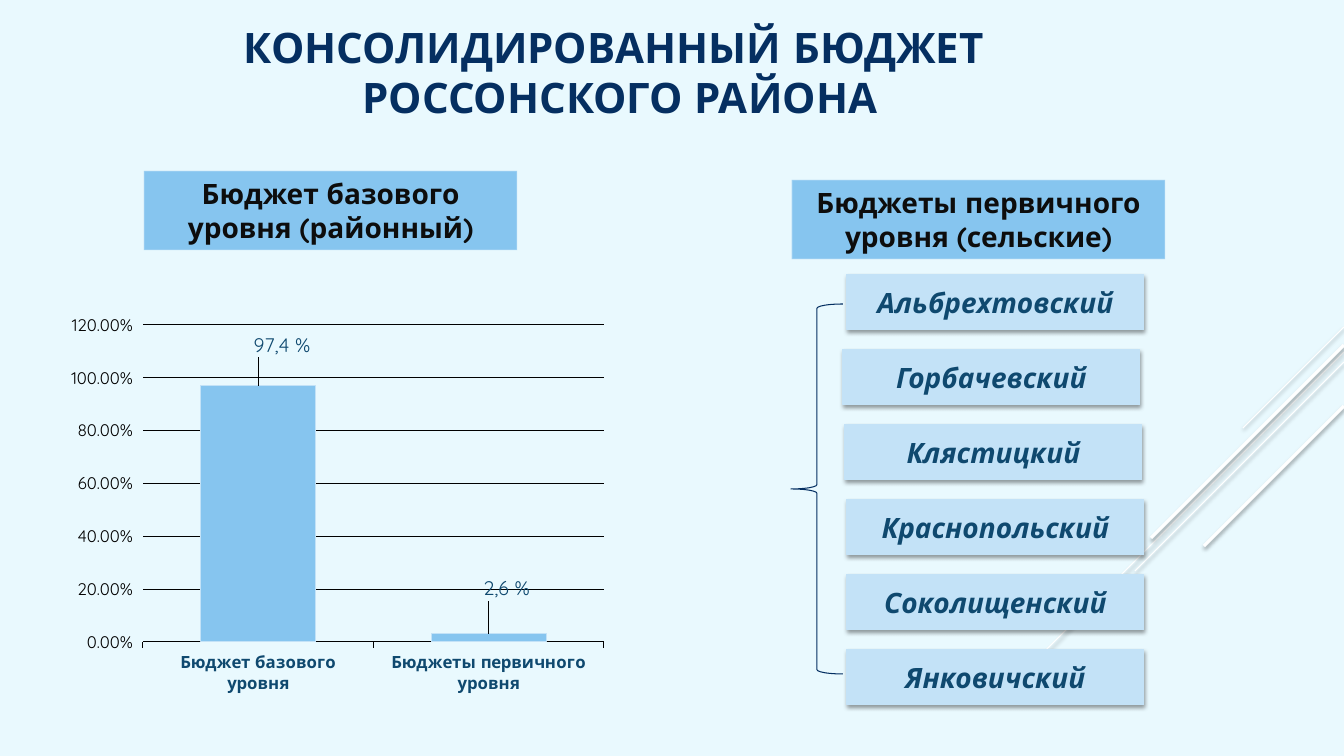
from lxml import etree
from pptx import Presentation
from pptx.chart.data import CategoryChartData
from pptx.dml.color import RGBColor
from pptx.enum.chart import XL_CHART_TYPE, XL_LABEL_POSITION, XL_TICK_MARK
from pptx.enum.shapes import MSO_CONNECTOR, MSO_SHAPE
from pptx.enum.text import MSO_ANCHOR, PP_ALIGN
from pptx.oxml import parse_xml
from pptx.oxml.ns import nsdecls, qn
from pptx.util import Pt

COLUMNS = XL_CHART_TYPE.COLUMN_CLUSTERED
LABEL_ABOVE = XL_LABEL_POSITION.OUTSIDE_END
TICK_OUT, TICK_NONE = XL_TICK_MARK.OUTSIDE, XL_TICK_MARK.NONE
STRAIGHT = MSO_CONNECTOR.STRAIGHT
RECTANGLE, LEFT_BRACE = MSO_SHAPE.RECTANGLE, MSO_SHAPE.LEFT_BRACE
MIDDLE, CENTER = MSO_ANCHOR.MIDDLE, PP_ALIGN.CENTER

FONT = "Quicksand"
BACKGROUND = RGBColor(0xE9, 0xF9, 0xFE)
WHITE = RGBColor(0xFF, 0xFF, 0xFF)
BLACK = RGBColor(0, 0, 0)
NEAR_BLACK = RGBColor(0x0D, 0x0D, 0x0D)
NAVY = RGBColor(0x05, 0x2F, 0x61)
BRACE_NAVY = RGBColor(0x03, 0x2E, 0x61)
TEAL = RGBColor(0x0F, 0x49, 0x6F)
BLUE = RGBColor(0x86, 0xC5, 0xEF)
PALE_BLUE = RGBColor(0xC3, 0xE2, 0xF7)

TITLE = "КОНСОЛИДИРОВАННЫЙ БЮДЖЕТ \vРОССОНСКОГО РАЙОНА"
HEADINGS = [  # text, left, top
    ("Бюджет базового уровня (районный)", 144, 171),
    ("Бюджеты первичного уровня (сельские)", 792, 180),
]
VILLAGES = [  # name, left
    ("Альбрехтовский", 847),
    ("Горбачевский", 843),
    ("Клястицкий", 845),
    ("Краснопольский", 847),
    ("Соколищенский", 847),
    ("Янковичский", 847),
]
SHARES = [  # category, share, label, label shift
    ("Бюджет базового уровня", 0.97, "97,4 %", (24, -24)),
    ("Бюджеты первичного уровня", 0.03, "2,6 %", (18, -29)),
]
STRIPES = [  # y at the right edge, run to the lower left, width in points
    (327, 101, 0.75),
    (352, 329, 0.75),
    (362, 209, 0.75),
    (345, 193, 2.25),
    (406, 140, 2.25),
]
SLIDE_W, SLIDE_H = 1344, 756
CHART_LEFT, CHART_TOP, CHART_W, CHART_H = 59, 304, 586, 452
PLOT = {"x": 84, "y": 21, "w": 461, "h": 317}
HEADING_W, HEADING_H = 373, 79
VILLAGE_TOP, VILLAGE_STEP, VILLAGE_W, VILLAGE_H = 275, 75, 297, 55


def px(*lengths):
    return [round(length * 914400 / 100.8) for length in lengths]


def style_font(font, size, color, bold=False, italic=False):
    font.name, font.size, font.bold, font.italic = FONT, Pt(size), bold, italic
    font.color.rgb = color


def write(frame, text, **font_format):
    frame.word_wrap = True
    frame.vertical_anchor = MIDDLE
    paragraph = frame.paragraphs[0]
    paragraph.text = text
    paragraph.alignment = CENTER
    for run in paragraph.runs:
        style_font(run.font, **font_format)


def cast_shadow(shape):
    properties = shape._element.spPr
    for old in properties.findall(qn("a:effectLst")):
        properties.remove(old)
    properties.append(parse_xml(
        f'<a:effectLst {nsdecls("a")}><a:outerShdw blurRad="39370" dist="20320" '
        'dir="5400000" rotWithShape="0"><a:srgbClr val="000000">'
        '<a:alpha val="38000"/></a:srgbClr></a:outerShdw></a:effectLst>'))


def add_box(slide, text, at, fill, **font_format):
    box = slide.shapes.add_shape(RECTANGLE, *px(*at))
    box.shadow.inherit = False
    box.fill.solid()
    box.fill.fore_color.rgb = fill
    box.line.color.rgb = PALE_BLUE
    box.line.width = Pt(0.75)
    write(box.text_frame, text, **font_format)
    return box


def add_stripes(slide):
    for top, run, width in STRIPES:
        stripe = slide.shapes.add_connector(
            STRAIGHT, *px(SLIDE_W, top, SLIDE_W - run, top + run))
        stripe.line.color.rgb = WHITE
        stripe.line.width = Pt(width)
        cast_shadow(stripe)


def manual_layout(places, target=""):
    """Layout element that holds px lengths as parts of the chart."""
    modes = "".join(f'<c:{side}Mode val="edge"/>' for side in "xy") if target else ""
    values = "".join(
        f'<c:{key} val="{length / (CHART_W if key in "xw" else CHART_H):.4f}"/>'
        for key, length in places.items())
    return parse_xml(f'<c:layout {nsdecls("c")}><c:manualLayout>{target}{modes}'
                     f'{values}</c:manualLayout></c:layout>')


def hide_leader_lines(labels):
    labels._element.append(parse_xml(
        f'<c:extLst {nsdecls("c")}><c:ext uri="{{CE6537A1-D6FC-4f65-9D91-7224C49458BB}}" '
        'xmlns:c15="http://schemas.microsoft.com/office/drawing/2012/chart">'
        '<c15:showLeaderLines val="0"/></c:ext></c:extLst>'))


def add_share_chart(slide):
    data = CategoryChartData(number_format="0.00%")
    data.categories = [category for category, *_ in SHARES]
    data.add_series("Series 1", [share for _, share, *_ in SHARES])
    at = px(CHART_LEFT, CHART_TOP, CHART_W, CHART_H)
    chart = slide.shapes.add_chart(COLUMNS, *at, data).chart
    chart.has_legend = chart.has_title = False
    style_font(chart.font, 12, BLACK)

    plot_area = chart._chartSpace.chart.plotArea
    for old in plot_area.findall(qn("c:layout")):
        plot_area.remove(old)
    plot_area.insert(0, manual_layout(PLOT, '<c:layoutTarget val="inner"/>'))

    categories, values = chart.category_axis, chart.value_axis
    style_font(categories.tick_labels.font, 12, TEAL, bold=True)
    categories.major_tick_mark = values.major_tick_mark = TICK_OUT
    categories.minor_tick_mark = values.minor_tick_mark = TICK_NONE
    style_font(values.tick_labels.font, 12, BLACK)
    values.tick_labels.number_format = "0.00%"
    values.tick_labels.number_format_is_linked = False
    values.minimum_scale, values.maximum_scale, values.major_unit = 0, 1.2, 0.2
    values.format.line.fill.background()
    for line in (categories.format.line, values.major_gridlines.format.line):
        line.color.rgb = BLACK
        line.width = Pt(0.75)

    plot = chart.plots[0]
    plot.gap_width = 100
    plot.vary_by_categories = False
    series = plot.series[0]
    series.format.fill.solid()
    series.format.fill.fore_color.rgb = BLUE
    series.format.line.color.rgb = PALE_BLUE
    series.format.line.width = Pt(0.75)
    for index, (_, _, caption, (dx, dy)) in enumerate(SHARES):
        label = series.points[index].data_label
        run = label.text_frame.paragraphs[0].add_run()
        run.text = caption
        style_font(run.font, 14, TEAL)
        label.position = LABEL_ABOVE
        element = series.data_labels._element.findall(qn("c:dLbl"))[index]
        element.insert(1, manual_layout({"x": dx, "y": dy}))
    hide_leader_lines(series.data_labels)


def main():
    deck = Presentation()
    deck.slide_width, deck.slide_height = px(SLIDE_W, SLIDE_H)
    slide = deck.slides.add_slide(deck.slide_layouts[6])
    slide.background.fill.solid()
    slide.background.fill.fore_color.rgb = BACKGROUND

    add_stripes(slide)
    title = slide.shapes.add_textbox(*px(30, 12, 1180, 119))
    write(title.text_frame, TITLE, size=30, color=NAVY, bold=True)
    add_share_chart(slide)

    for text, left, top in HEADINGS:
        heading = add_box(slide, text, (left, top, HEADING_W, HEADING_H), BLUE,
                          size=20, color=NEAR_BLACK, bold=True)
        outline = heading.line.fill._xPr.find(f'{qn("a:solidFill")}/{qn("a:srgbClr")}')
        etree.SubElement(outline, qn("a:alpha"), val="44000")
    for row, (name, left) in enumerate(VILLAGES):
        top = VILLAGE_TOP + row * VILLAGE_STEP
        village = add_box(slide, name, (left, top, VILLAGE_W, VILLAGE_H), PALE_BLUE,
                          size=20, color=TEAL, bold=True, italic=True)
        cast_shadow(village)

    brace = slide.shapes.add_shape(LEFT_BRACE, *px(791, 304, 52, 370))
    brace.shadow.inherit = False
    brace.fill.background()
    brace.line.color.rgb = BRACE_NAVY
    brace.line.width = Pt(0.75)
    deck.save("out.pptx")


if __name__ == "__main__":
    main()
